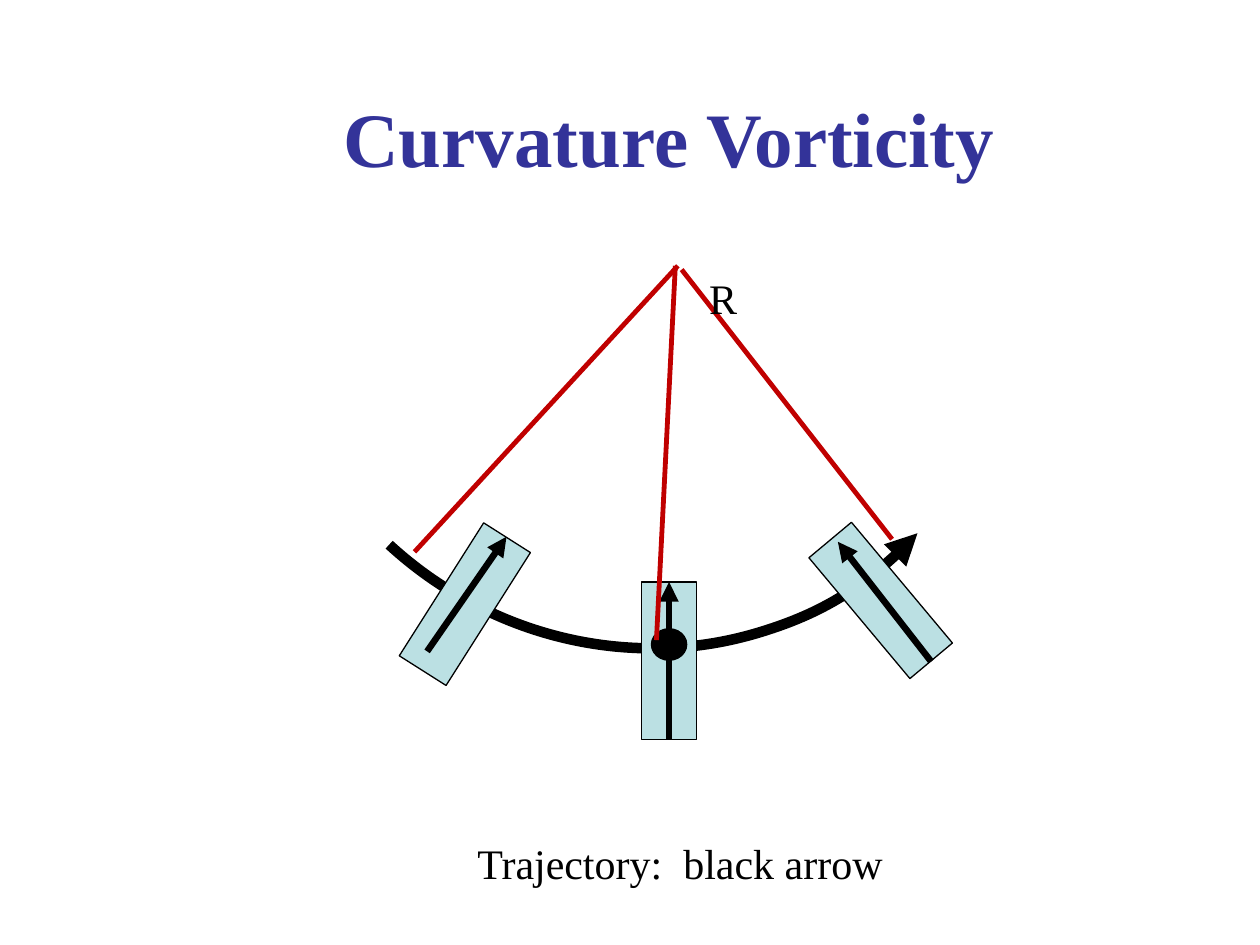
import pptx
import pptx.util
import pptx.dml.color
import pptx.enum.shapes
import pptx.enum.text
import pptx.oxml
import pptx.oxml.ns

Inches = pptx.util.Inches
SHAPES = pptx.enum.shapes.MSO_SHAPE
COLORS = {"title": "333399", "ink": "000000", "parcel": "BBE0E3", "radius": "C00000"}
FONT = "Times New Roman"

TITLE = ("Curvature Vorticity", (1.06, 0.46, 8.5, 1.25))
TRAJECTORY = ((2.15, -0.84, 5.81, 6.05), 132.6)
PARCEL_SIZE = (0.44, 1.25)
PARCELS = [((3.47, 4.17), 32.4), ((5.09, 4.62), 0), ((6.77, 4.14), 320.1)]
CENTER_DOT = (5.17, 4.99, 0.28, 0.25)
PARCEL_ARROWS = [
    ((3.39, 5.17), (4.02, 4.26)),
    ((5.31, 5.87), (5.31, 4.62)),
    ((7.39, 5.25), (6.65, 4.3)),
]
RADII = [
    ((3.29, 4.38), (5.38, 2.11)),
    ((5.21, 5.08), (5.36, 2.11)),
    ((7.08, 4.28), (5.41, 2.14)),
]
LABELS = [
    ("Trajectory:  black arrow", (3.69, 6.6, 3.45, 0.5)),
    ("R", (5.53, 2.11, 0.43, 0.5)),
]


def color(name):
    return pptx.dml.color.RGBColor.from_string(COLORS[name])


def style_line(line, name, width):
    line.color.rgb = color(name)
    line.width = pptx.util.Pt(width)


def add_arrowhead(line, end):
    line._get_or_add_ln().append(
        pptx.oxml.parse_xml(f'<a:{end} {pptx.oxml.ns.nsdecls("a")} type="triangle"/>')
    )


def add_outline(slide, kind, box, width, fill=None, rotation=0):
    shape = slide.shapes.add_shape(kind, *map(Inches, box))
    shape.shadow.inherit = False
    shape.rotation = rotation
    if fill:
        shape.fill.solid()
        shape.fill.fore_color.rgb = color(fill)
    else:
        shape.fill.background()
    style_line(shape.line, "ink", width)
    return shape


def add_line(slide, start, end, name, width):
    connector = slide.shapes.add_connector(
        pptx.enum.shapes.MSO_CONNECTOR.STRAIGHT, *map(Inches, start + end)
    )
    style_line(connector.line, name, width)
    connector._element.spPr.append(
        pptx.oxml.parse_xml(f'<a:effectLst {pptx.oxml.ns.nsdecls("a")}/>')
    )
    return connector


def write_text(shape, text, size, name, bold=False):
    shape.text_frame.text = text
    paragraph = shape.text_frame.paragraphs[0]
    paragraph.font.name = FONT
    paragraph.font.size = pptx.util.Pt(size)
    paragraph.font.bold = bold
    paragraph.font.color.rgb = color(name)
    return paragraph


def main():
    presentation = pptx.Presentation()
    presentation.slide_width, presentation.slide_height = Inches(10), Inches(7.5)
    slide = presentation.slides.add_slide(presentation.slide_layouts[5])

    title = slide.shapes.title
    text, box = TITLE
    title.left, title.top, title.width, title.height = map(Inches, box)
    paragraph = write_text(title, text, 44, "title", bold=True)
    paragraph.alignment = pptx.enum.text.PP_ALIGN.CENTER
    title.text_frame.vertical_anchor = pptx.enum.text.MSO_ANCHOR.MIDDLE

    box, rotation = TRAJECTORY
    trajectory = add_outline(slide, SHAPES.ARC, box, 6, rotation=rotation)
    add_arrowhead(trajectory.line, "headEnd")

    parcels = [
        add_outline(slide, SHAPES.RECTANGLE, corner + PARCEL_SIZE, 0.75, "parcel", rotation)
        for corner, rotation in PARCELS
    ]
    add_outline(slide, SHAPES.OVAL, CENTER_DOT, 0.75, "ink")

    arrows = [add_line(slide, start, end, "ink", 3.75) for start, end in PARCEL_ARROWS]
    for arrow in arrows:
        add_arrowhead(arrow.line, "tailEnd")
    arrows[1].begin_connect(parcels[1], 2)
    arrows[1].end_connect(parcels[1], 0)

    for start, end in RADII:
        add_line(slide, start, end, "radius", 2.75)

    for text, box in LABELS:
        label = slide.shapes.add_textbox(*map(Inches, box))
        label.text_frame.word_wrap = False
        label.text_frame.auto_size = pptx.enum.text.MSO_AUTO_SIZE.SHAPE_TO_FIT_TEXT
        write_text(label, text, 24, "ink")

    presentation.save("out.pptx")


if __name__ == "__main__":
    main()
